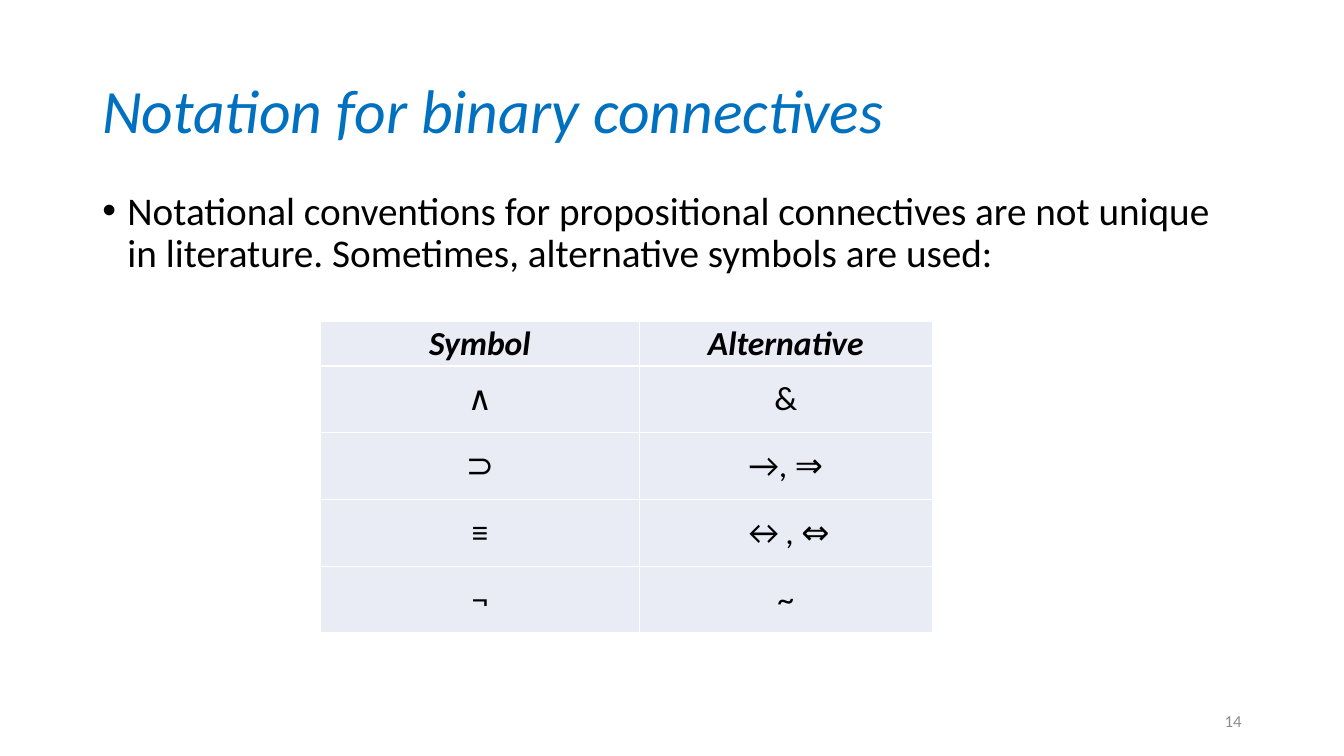
import pptx
import pptx.util
import pptx.dml.color
import pptx.enum.text
import pptx.oxml.ns
from lxml import etree

Pt = pptx.util.Pt
RGB = pptx.dml.color.RGBColor.from_string
ALIGN = pptx.enum.text.PP_ALIGN
MIDDLE = pptx.enum.text.MSO_ANCHOR.MIDDLE
qn = pptx.oxml.ns.qn

COLORS = {
    "title": "0070C0",
    "text": "000000",
    "number": "8C8C8C",
    "cell": "E9EBF5",
    "border": "FFFFFF",
}


def write(frame, text, size, color="text", bold=False, italic=False,
          align=ALIGN.LEFT, spacing=None, before=0, after=0):
    """Fill the frame's first paragraph with formatted text and return it."""
    frame.word_wrap = True
    paragraph = frame.paragraphs[0]
    paragraph.alignment = align
    paragraph.line_spacing = spacing
    paragraph.space_before = Pt(before)
    paragraph.space_after = Pt(after)
    run = paragraph.add_run()
    run.text = text
    run.font.name = "Calibri"
    run.font.size = Pt(size)
    run.font.bold = bold
    run.font.italic = italic
    run.font.color.rgb = RGB(COLORS[color])
    return paragraph


def add_borders(cell, color, width):
    properties = cell._tc.get_or_add_tcPr()
    for position, side in enumerate(("lnL", "lnR", "lnT", "lnB")):
        line = etree.Element(qn(f"a:{side}"), w=str(Pt(width)))
        fill = etree.SubElement(line, qn("a:solidFill"))
        etree.SubElement(fill, qn("a:srgbClr"), val=color)
        properties.insert(position, line)


presentation = pptx.Presentation()
presentation.slide_width = Pt(960)
presentation.slide_height = Pt(540)
slide = presentation.slides.add_slide(presentation.slide_layouts[6])

# Title
title = slide.shapes.add_textbox(Pt(66), Pt(28.75), Pt(828), Pt(104.4)).text_frame
title.vertical_anchor = MIDDLE
write(title, "Notation for binary connectives", 44, color="title", italic=True, spacing=0.9)

# Bulleted statement
statement = slide.shapes.add_textbox(Pt(66), Pt(133.2), Pt(828), Pt(353.5)).text_frame
bullet_paragraph = write(
    statement,
    "Notational conventions for propositional connectives are not unique "
    "in literature. Sometimes, alternative symbols are used:",
    28, spacing=0.9, before=10)
bullet = bullet_paragraph._p.get_or_add_pPr()
bullet.set("marL", str(Pt(18)))
bullet.set("indent", str(-Pt(18)))
etree.SubElement(bullet, qn("a:buFont"), typeface="Arial")
etree.SubElement(bullet, qn("a:buChar"), char="•")

# Slide number
slide_number = slide.shapes.add_textbox(Pt(678), Pt(500.5), Pt(216), Pt(28.75)).text_frame
slide_number.vertical_anchor = MIDDLE
write(slide_number, "14", 12, color="number", align=ALIGN.RIGHT)

# Table of symbols
notation = [
    ("Symbol", "Alternative"),
    ("∧", "&"),
    ("⊃", "→, ⇒"),
    ("≡", "↔, ⇔"),
    ("¬", "~"),
]
column_widths = (228, 209)
header_height, symbol_height = 31.6, 47.7
table = slide.shapes.add_table(
    len(notation), len(column_widths), Pt(228.8), Pt(229.9), Pt(sum(column_widths)),
    Pt(header_height + symbol_height * (len(notation) - 1))).table
for column, width in zip(table.columns, column_widths):
    column.width = Pt(width)

for row_index, entries in enumerate(notation):
    is_header = row_index == 0
    table.rows[row_index].height = Pt(header_height if is_header else symbol_height)
    for column_index, entry in enumerate(entries):
        cell = table.cell(row_index, column_index)
        cell.margin_left = cell.margin_right = Pt(3.6)
        cell.margin_top = cell.margin_bottom = Pt(0)
        cell.vertical_anchor = MIDDLE
        cell.fill.solid()
        cell.fill.fore_color.rgb = RGB(COLORS["cell"])
        add_borders(cell, COLORS["border"], 1)
        write(cell.text_frame, entry, 24, bold=is_header, italic=is_header,
              align=ALIGN.CENTER, after=3 if is_header else 0)

presentation.save("out.pptx")
